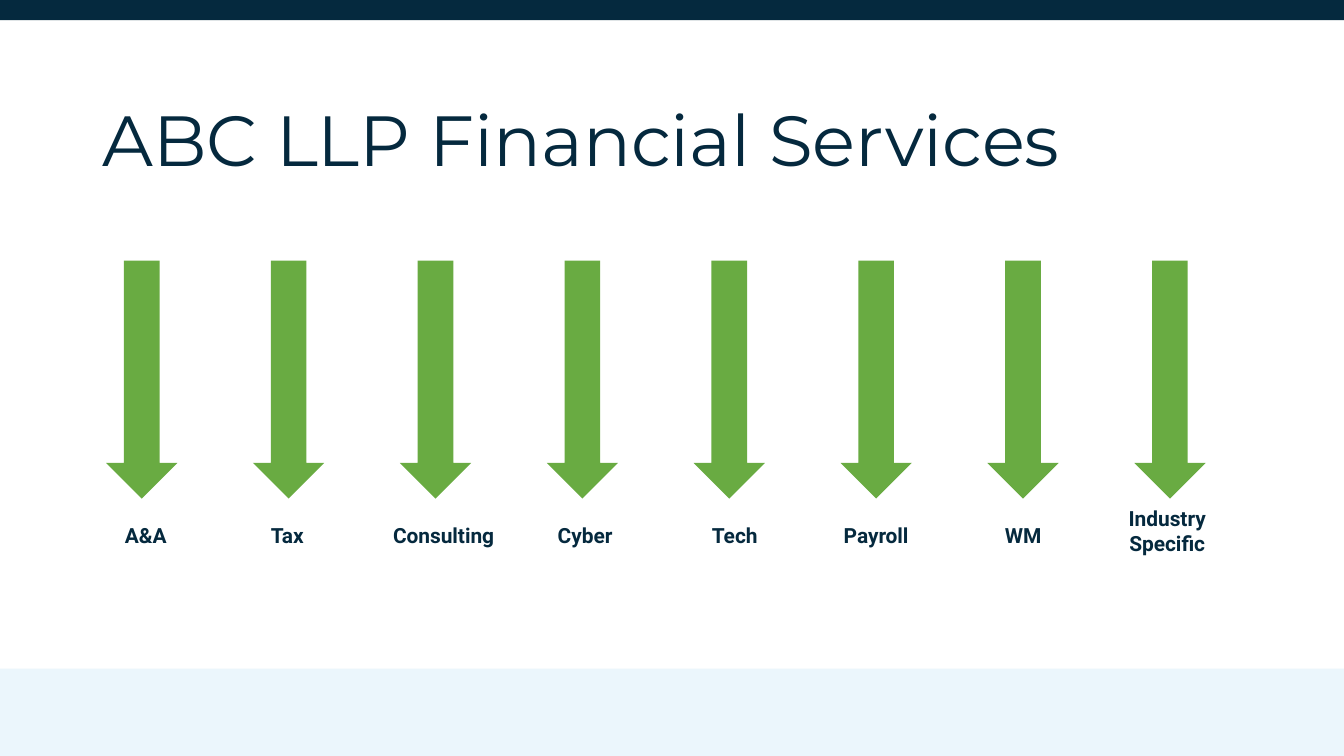
from pptx import Presentation
from pptx.dml.color import RGBColor
from pptx.enum.shapes import MSO_SHAPE
from pptx.enum.text import MSO_ANCHOR, PP_ALIGN
from pptx.util import Inches, Pt

WIDTH = 10
HEIGHT = WIDTH * 9 / 16
NAVY, PALE, GREEN = "05293E", "EBF6FC", "69AB42"
ARROW_WIDTH, ARROW_HEIGHT = 0.53, 1.77
LABEL_GAP = 0.24
LINE_HEIGHT = 0.21

SERVICES = [
    ("A&A", 0.66, 0.03, 1),
    ("Tax", 0.6, -0.01, 1),
    ("Consulting", 1.38, 0.06, 1),
    ("Cyber", 0.87, 0.02, 1),
    ("Tech", 0.77, 0.04, 1),
    ("Payroll", 1.2, 0, 1),
    ("WM", 1.12, 0, 1),
    ("Industry Specific", 1.1, -0.02, 2),
]


def colour(value):
    return RGBColor.from_string(value)


def inches(*lengths):
    return [Inches(length) for length in lengths]


def add_filled(parent, kind, box, fill):
    shape = parent.shapes.add_shape(kind, *inches(*box))
    shape.shadow.inherit = False
    shape.fill.solid()
    shape.fill.fore_color.rgb = colour(fill)
    shape.line.fill.background()
    return shape


def write(shape, text, font, size, bold, align, anchor, margins):
    frame = shape.text_frame
    frame.word_wrap = True
    frame.vertical_anchor = anchor
    side, edge = inches(*margins)
    frame.margin_left = frame.margin_right = side
    frame.margin_top = frame.margin_bottom = edge
    para = frame.paragraphs[0]
    para.alignment = align
    span = para.add_run()
    span.text = text
    span.font.name = font
    span.font.size = Pt(size)
    span.font.bold = bold
    span.font.color.rgb = colour(NAVY)
    return para


def add_bands(page):
    add_filled(page, MSO_SHAPE.RECTANGLE, (0, HEIGHT - 0.65, WIDTH, 0.65), PALE)
    add_filled(page, MSO_SHAPE.RECTANGLE, (0, 0, WIDTH, 0.15), NAVY)


def add_title(page, box):
    title = page.shapes.title
    title.left, title.top, title.width, title.height = inches(*box)
    para = write(title, "ABC LLP Financial Services", "Montserrat", 38, False,
                 PP_ALIGN.LEFT, MSO_ANCHOR.TOP, (0.07, 0.04))
    para.line_spacing = 0.9


def add_service(page, centre, top, service):
    text, width, shift, lines = service
    group = page.shapes.add_group_shape()
    add_filled(group, MSO_SHAPE.DOWN_ARROW,
               (centre - ARROW_WIDTH / 2, top, ARROW_WIDTH, ARROW_HEIGHT), GREEN)
    height = lines * LINE_HEIGHT
    middle = top + ARROW_HEIGHT + LABEL_GAP + (0.03 if lines == 1 else 0)
    label = group.shapes.add_textbox(
        *inches(centre + shift - width / 2, middle - height / 2, width, height))
    write(label, text, "Roboto", 11.2, True, PP_ALIGN.CENTER,
          MSO_ANCHOR.MIDDLE, (0.03, 0.01))


def add_services(page, box):
    left, top, width = box
    pitch = (width - ARROW_WIDTH) / (len(SERVICES) - 1)
    for column, service in enumerate(SERVICES):
        add_service(page, left + ARROW_WIDTH / 2 + column * pitch, top, service)


def main():
    deck = Presentation()
    deck.slide_width, deck.slide_height = inches(WIDTH, HEIGHT)
    page = deck.slides.add_slide(deck.slide_layouts.get_by_name("Title Only"))
    page.background.fill.solid()
    page.background.fill.fore_color.rgb = colour("FFFFFF")
    add_bands(page)
    add_title(page, (0.69, 0.74, 8.62, 0.58))
    add_services(page, (0.79, 1.94, 8.18))
    deck.save("out.pptx")


if __name__ == "__main__":
    main()
